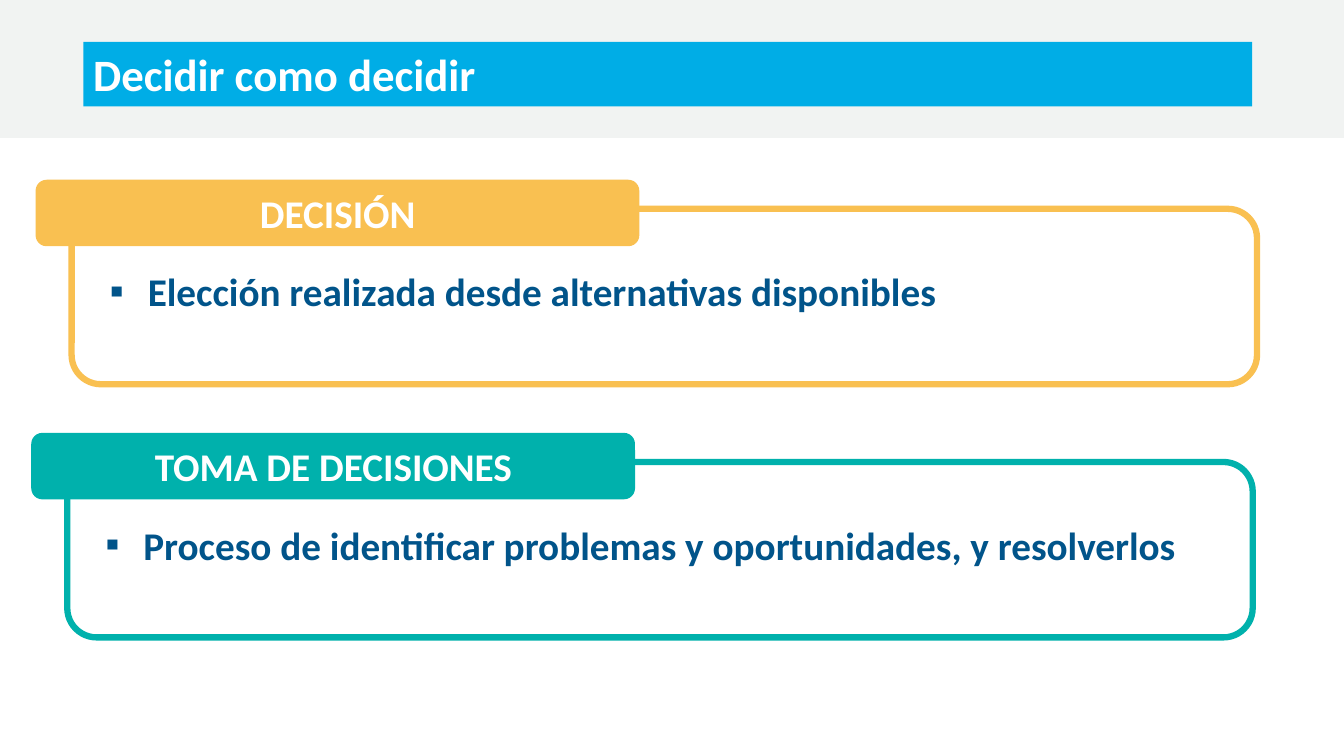
"""Build a slide that defines two terms in framed panels under a title bar."""
from dataclasses import dataclass

from lxml.etree import SubElement
from pptx import Presentation
from pptx.dml.color import RGBColor
from pptx.enum.shapes import MSO_SHAPE as Preset
from pptx.enum.text import MSO_ANCHOR as Anchor, PP_ALIGN as Align
from pptx.oxml.ns import qn
from pptx.shapes.autoshape import Shape
from pptx.slide import Slide
from pptx.util import Pt

WHITE = RGBColor(0xFF, 0xFF, 0xFF)
PALE_GREY = RGBColor(0xF1, 0xF3, 0xF2)
SKY = RGBColor(0x00, 0xAD, 0xE6)
NAVY = RGBColor(0x01, 0x54, 0x8A)
AMBER = RGBColor(0xF9, 0xC0, 0x51)
TEAL = RGBColor(0x00, 0xB1, 0xAC)
FONT = "Calibri"
BULLET_INDENT = 27


@dataclass(frozen=True)
class Area:
    """Rectangle in points."""
    left: float
    top: float
    width: float
    height: float

    def lengths(self) -> tuple[Pt, Pt, Pt, Pt]:
        """Give the position and size as slide lengths."""
        return Pt(self.left), Pt(self.top), Pt(self.width), Pt(self.height)

    def moved(self, right: float, down: float) -> "Area":
        """Give the same rectangle shifted."""
        return Area(self.left + right, self.top + down, self.width, self.height)


@dataclass(frozen=True)
class Panel:
    """Term with its definition and the corner of its tab."""
    term: str
    definition: str
    color: RGBColor
    left: float
    top: float


BAND = Area(0, 0, 960, 97.9)
TITLE_BAR = Area(59.5, 30, 835, 46)
TAB = Area(0, 0, 431.3, 47.5)
TAB_LABEL = Area(11.5, 2.3, 408.7, 42.9)
FRAME = Area(25.8, 20.8, 846.7, 125.3)
DEFINITION = Area(48.2, 27, 801.4, 113)
PANELS = (
    Panel("DECISIÓN", "Elección realizada desde alternativas disponibles",
          AMBER, 25.4, 128.4),
    Panel("TOMA DE DECISIONES",
          "Proceso de identificar problemas y oportunidades, y resolverlos",
          TEAL, 22.3, 309.2),
)


def add_block(page: Slide, preset: Preset, area: Area, fill: RGBColor | None = None,
              line: RGBColor | None = None, weight: float = 1) -> Shape:
    """Draw a preset shape with an optional fill and outline."""
    block = page.shapes.add_shape(preset, *area.lengths())
    block.shadow.inherit = False
    if fill is None:
        block.fill.background()
    else:
        block.fill.solid()
        block.fill.fore_color.rgb = fill
    if line is None:
        block.line.fill.background()
    else:
        block.line.color.rgb = line
        block.line.width = Pt(weight)
    return block


def write(box: Shape, text: str, *, size: float = 28, color: RGBColor = WHITE,
          align: Align = Align.LEFT, anchor: Anchor = Anchor.MIDDLE,
          inset: float | None = None, spacing: float | None = None,
          bullet: str | None = None) -> None:
    """Write one bold paragraph into a box."""
    frame = box.text_frame
    frame.word_wrap = True
    frame.vertical_anchor = anchor
    if inset is not None:
        frame.margin_left = frame.margin_right = Pt(inset)
        frame.margin_top = frame.margin_bottom = Pt(inset)
    para = frame.paragraphs[0]
    para.alignment = align
    if spacing is not None:
        para.line_spacing = Pt(spacing)
    if bullet is not None:
        properties = para._p.get_or_add_pPr()
        properties.set("marL", str(Pt(BULLET_INDENT)))
        properties.set("indent", str(-Pt(BULLET_INDENT)))
        tint = SubElement(properties, qn("a:buClr"))
        SubElement(tint, qn("a:srgbClr"), val=str(color))
        SubElement(properties, qn("a:buFont"), typeface=FONT)
        SubElement(properties, qn("a:buChar"), char=bullet)
    span = para.add_run()
    span.text = text
    span.font.name = FONT
    span.font.size = Pt(size)
    span.font.bold = True
    span.font.color.rgb = color


def draw_panel(page: Slide, panel: Panel) -> None:
    """Draw a frame with its definition and the tab that names it."""
    frame, definition, tab, label = (
        area.moved(panel.left, panel.top)
        for area in (FRAME, DEFINITION, TAB, TAB_LABEL))
    add_block(page, Preset.ROUNDED_RECTANGLE, frame, line=panel.color, weight=4.5)
    box = page.shapes.add_textbox(*definition.lengths())
    write(box, panel.definition, color=NAVY, inset=5, spacing=26, bullet="▪")
    add_block(page, Preset.ROUNDED_RECTANGLE, tab, fill=panel.color)
    name = add_block(page, Preset.RECTANGLE, label, fill=panel.color)
    write(name, panel.term, align=Align.CENTER)


def main() -> None:
    """Build and save the deck."""
    deck = Presentation()
    deck.slide_width, deck.slide_height = Pt(960), Pt(540)
    page = deck.slides.add_slide(deck.slide_layouts[6])
    add_block(page, Preset.RECTANGLE, BAND, fill=PALE_GREY, line=PALE_GREY)
    title = add_block(page, Preset.RECTANGLE, TITLE_BAR, fill=SKY)
    write(title, "Decidir como decidir", size=32, align=Align.JUSTIFY,
          anchor=Anchor.TOP)
    for panel in PANELS:
        draw_panel(page, panel)
    deck.save("out.pptx")


if __name__ == "__main__":
    main()
